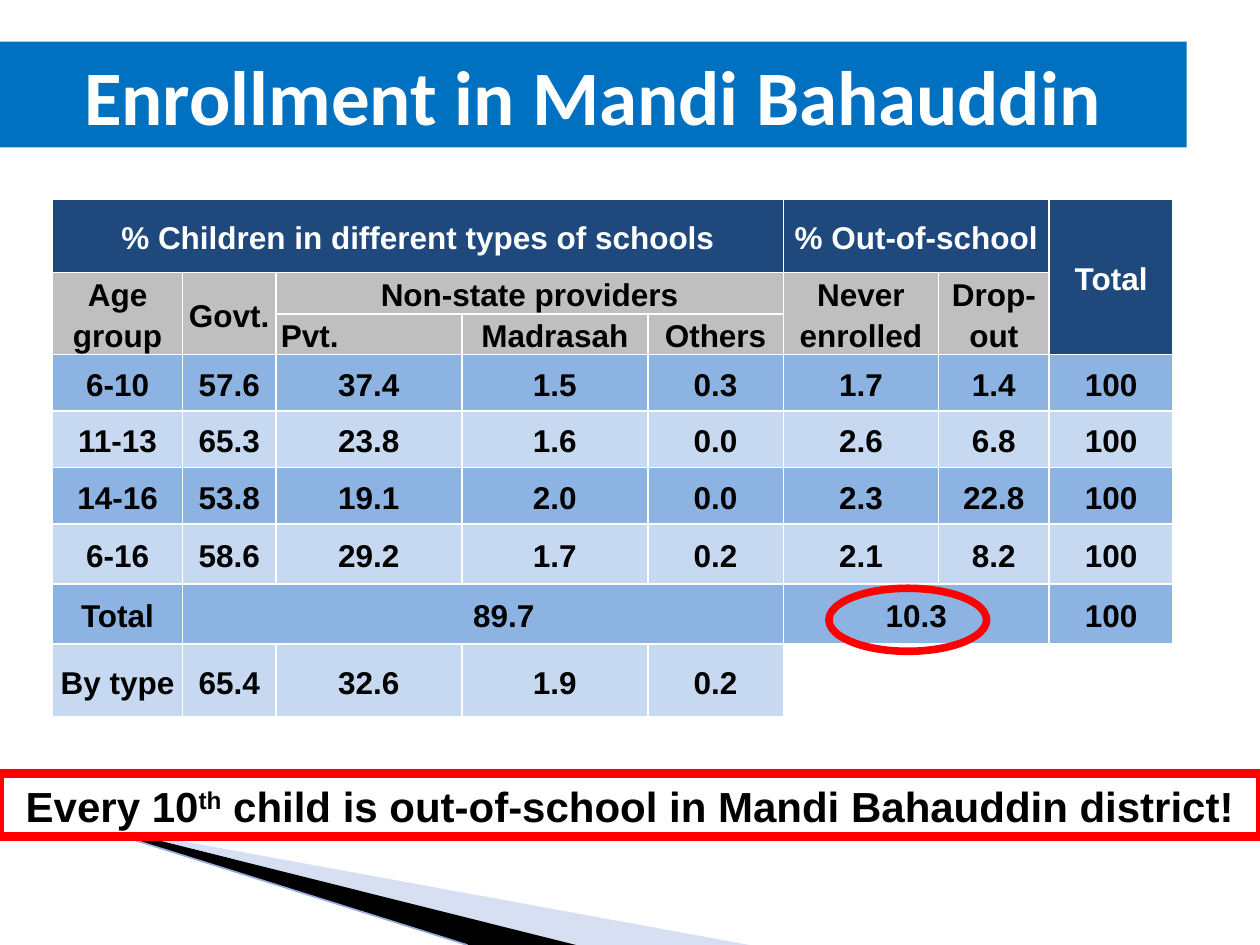
"""Build the Mandi Bahauddin enrollment slide with its table and key message."""

from lxml.etree import SubElement
from pptx import Presentation
from pptx.dml.color import RGBColor
from pptx.enum.shapes import MSO_CONNECTOR as Link, MSO_SHAPE as Preset
from pptx.enum.text import MSO_ANCHOR as Anchor, MSO_AUTO_SIZE as Fit, PP_ALIGN as Align
from pptx.oxml import parse_xml
from pptx.oxml.ns import nsdecls, qn
from pptx.util import Cm, Pt

THEME = {
    "body_font": "Arial", "title_font": "Calibri",
    "title_size": 44, "message_size": 24, "table_size": 18,
    "white": "FFFFFF", "black": "000000", "red": "FF0000", "title_bar": "0070C0",
    "header": "1F497D", "subheader": "BFBFBF", "band_dark": "8DB3E2", "band_light": "C6D9F1",
    "wedge": "9DB2E1", "edge": "94ABDC",
}

TITLE = "Enrollment in Mandi Bahauddin"
MESSAGE = [("Every 10", None), ("th", "30000"),
           (" child is out-of-school in Mandi Bahauddin district!", None)]
ENROLLMENT = [
    ["% Children in different types of schools", "", "", "", "", "% Out-of-school", "", "Total"],
    ["Age group", "Govt.", "Non-state providers", "", "", "Never\nenrolled", "Drop-\nout", ""],
    ["", "", "Pvt.", "Madrasah", "Others", "", "", ""],
    ["6-10", "57.6", "37.4", "1.5", "0.3", "1.7", "1.4", "100"],
    ["11-13", "65.3", "23.8", "1.6", "0.0", "2.6", "6.8", "100"],
    ["14-16", "53.8", "19.1", "2.0", "0.0", "2.3", "22.8", "100"],
    ["6-16", "58.6", "29.2", "1.7", "0.2", "2.1", "8.2", "100"],
    ["Total", "89.7", "", "", "", "10.3", "", "100"],
    ["By type", "65.4", "32.6", "1.9", "0.2", "", "", ""],
]
MERGES = [
    ((0, 0), (0, 4)), ((0, 5), (0, 6)), ((0, 7), (2, 7)),
    ((1, 0), (2, 0)), ((1, 1), (2, 1)), ((1, 2), (1, 4)),
    ((1, 5), (2, 5)), ((1, 6), (2, 6)),
    ((7, 1), (7, 4)), ((7, 5), (7, 6)), ((8, 5), (8, 6)),
]
COLUMN_WIDTHS = [2.62, 1.88, 3.75, 3.75, 2.73, 3.13, 2.23, 2.5]
ROW_HEIGHTS = [1.47, 0.84, 0.74, 1.14, 1.14, 1.14, 1.21, 1.21, 1.47]
TABLE_ORIGIN = (1.06, 4.02)
OUT_OF_SCHOOL_COLUMN = 5
TOTAL_COLUMN = 7
HEADER_ROWS = 3

WEDGES = [
    ("wedge", 40, [(1.4, 16.54), (15.11, 19.05), (11.58, 19.05), (1.4, 16.51)]),
    ("black", 100, [(1.35, 16.48), (11.61, 19.05), (9.45, 19.05), (1.37, 16.51)]),
]
EDGE = (0, 16.08, 9.42, 19.05)
TITLE_BOX = (0, 0.84, 23.92, 2.13)
MESSAGE_BOX = (0, 15.6, 25.4, 1.27)
HIGHLIGHT_BOX = (16.71, 11.86, 3.18, 1.27)


def color(name):
    return RGBColor.from_string(THEME[name])


def lengths(values):
    return [Cm(value) for value in values]


def apply(target, **values):
    for key, value in values.items():
        setattr(target, key, value)


def style_font(font, size, ink, face="body_font"):
    apply(font, name=THEME[face], size=Pt(THEME[size]), bold=True)
    font.color.rgb = color(ink)


def paint(fill, name):
    if name:
        fill.solid()
        fill.fore_color.rgb = color(name)
    else:
        fill.background()


def add_preset(shapes, preset, box, fill, outline_width):
    shape = shapes.add_shape(preset, *lengths(box))
    shape.shadow.inherit = False
    paint(shape.fill, fill)
    shape.line.color.rgb = color("red")
    shape.line.width = Pt(outline_width)
    return shape


def add_title(shapes):
    title = shapes.title
    left, top, width, height = lengths(TITLE_BOX)
    apply(title, left=left, top=top, width=width, height=height)
    paint(title.fill, "title_bar")
    title.text_frame.text = TITLE
    apply(title.text_frame, auto_size=Fit.NONE, word_wrap=True, vertical_anchor=Anchor.MIDDLE)
    paragraph = title.text_frame.paragraphs[0]
    paragraph.alignment = Align.CENTER
    style_font(paragraph.runs[0].font, "title_size", "white", "title_font")


def add_wedges(shapes):
    for name, opacity, points in WEDGES:
        start, *rest = [lengths(point) for point in points]
        builder = shapes.build_freeform(*start, scale=1.0)
        builder.add_line_segments(rest, close=True)
        wedge = builder.convert_to_shape()
        wedge.shadow.inherit = False
        paint(wedge.fill, name)
        wedge.line.fill.background()
        if opacity < 100:
            tint = wedge.fill._xPr.find(qn("a:solidFill"))[0]
            SubElement(tint, qn("a:alpha")).set("val", str(opacity * 1000))
    edge = shapes.add_connector(Link.STRAIGHT, *lengths(EDGE))
    edge.line.color.rgb = color("edge")
    edge.line.width = Pt(0.95)
    SubElement(edge._element.spPr, qn("a:effectLst"))


def add_message(shapes):
    banner = add_preset(shapes, Preset.RECTANGLE, MESSAGE_BOX, "white", 5)
    apply(banner.text_frame, word_wrap=True, vertical_anchor=Anchor.MIDDLE)
    paragraph = banner.text_frame.paragraphs[0]
    paragraph.alignment = Align.CENTER
    for words, baseline in MESSAGE:
        run = paragraph.add_run()
        run.text = words
        style_font(run.font, "message_size", "black")
        if baseline:
            run._r.get_or_add_rPr().set("baseline", baseline)


def cell_colors(row, column):
    if row == 0 or (row < HEADER_ROWS and column == TOTAL_COLUMN):
        return "header", "white"
    if row < HEADER_ROWS:
        return "subheader", "black"
    if row == len(ENROLLMENT) - 1 and column >= OUT_OF_SCHOOL_COLUMN:
        return None, "black"
    return ("band_dark" if row % 2 else "band_light"), "black"


def add_borders(cell):
    properties = cell._tc.get_or_add_tcPr()
    for position, side in enumerate(("lnL", "lnR", "lnT", "lnB")):
        properties.insert(position, parse_xml(
            f'<a:{side} {nsdecls("a")} w="{Pt(1)}"><a:solidFill>'
            f'<a:srgbClr val="{THEME["white"]}"/></a:solidFill></a:{side}>'))


def add_enrollment_table(shapes):
    frame = shapes.add_table(
        len(ROW_HEIGHTS), len(COLUMN_WIDTHS), *lengths(TABLE_ORIGIN),
        Cm(sum(COLUMN_WIDTHS)), Cm(sum(ROW_HEIGHTS)))
    table = frame.table
    apply(table, first_row=False, horz_banding=False)
    for column, width in zip(table.columns, lengths(COLUMN_WIDTHS)):
        column.width = width
    for row, height in zip(table.rows, lengths(ROW_HEIGHTS)):
        row.height = height
    for first, last in MERGES:
        table.cell(*first).merge(table.cell(*last))
    for r, entries in enumerate(ENROLLMENT):
        for c, entry in enumerate(entries):
            cell = table.cell(r, c)
            fill, ink = cell_colors(r, c)
            paint(cell.fill, fill)
            add_borders(cell)
            apply(cell, margin_left=Cm(0.1), margin_right=Cm(0.1), margin_top=0,
                  margin_bottom=0, vertical_anchor=Anchor.MIDDLE)
            if not entry:
                continue
            cell.text_frame.text = entry
            for paragraph in cell.text_frame.paragraphs:
                apply(paragraph, line_spacing=1.15,
                      alignment=Align.JUSTIFY if entry == "Pvt." else Align.CENTER)
                style_font(paragraph.runs[0].font, "table_size", ink)
                if entry == "89.7":
                    paragraph._p.get_or_add_pPr().set("indent", str(Cm(0.84)))


def main():
    deck = Presentation()
    apply(deck, slide_width=Cm(25.4), slide_height=Cm(19.05))
    shapes = deck.slides.add_slide(deck.slide_layouts[5]).shapes
    add_wedges(shapes)
    add_message(shapes)
    add_title(shapes)
    add_enrollment_table(shapes)
    add_preset(shapes, Preset.OVAL, HIGHLIGHT_BOX, None, 4.33)
    deck.save("out.pptx")


if __name__ == "__main__":
    main()
